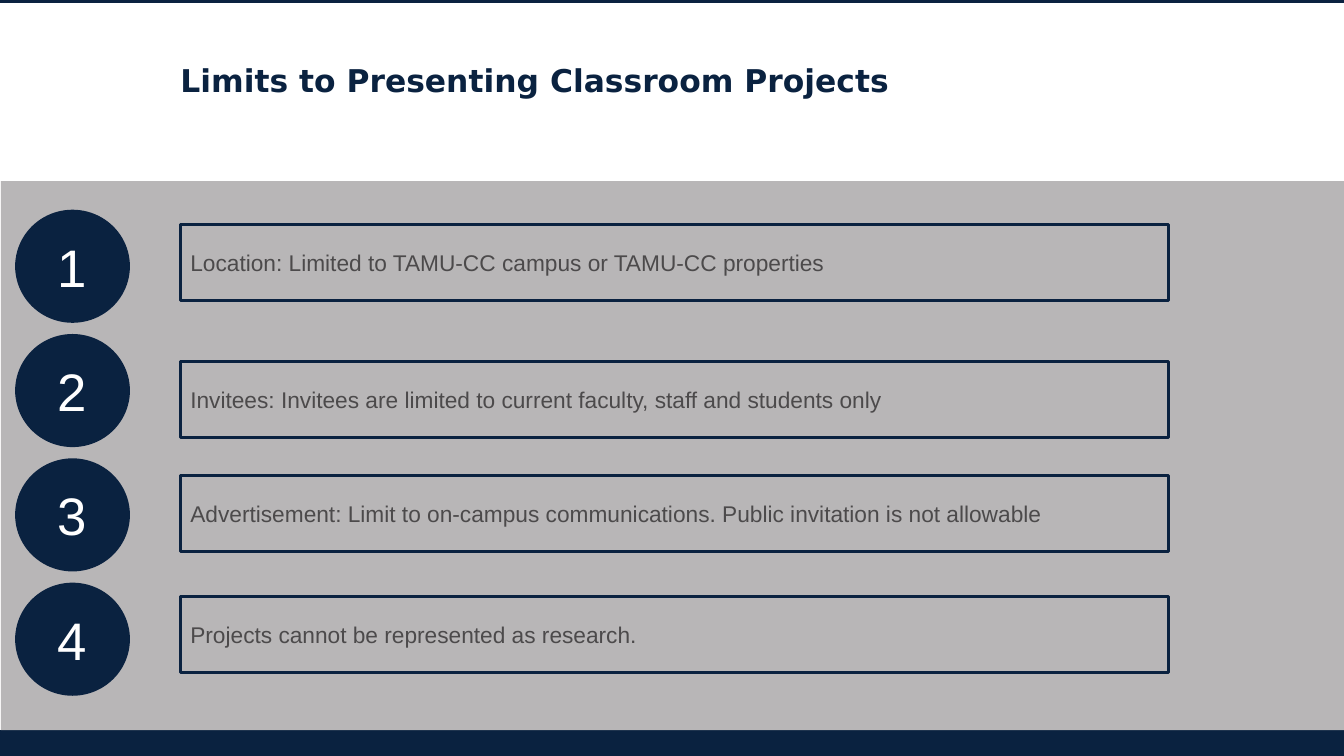
from pptx import Presentation
from pptx.dml.color import RGBColor
from pptx.enum.shapes import MSO_SHAPE as Shape
from pptx.enum.text import MSO_ANCHOR as Anchor, MSO_AUTO_SIZE as AutoSize, PP_ALIGN as Align
from pptx.util import Pt

TITLE = "Limits to Presenting Classroom Projects"
# Text of each limit and the top of its box
LIMITS = [
    ("Location: Limited to TAMU-CC campus or TAMU-CC properties", 160.6),
    ("Invitees: Invitees are limited to current faculty, staff and students only", 258.5),
    ("Advertisement: Limit to on-campus communications. Public invitation is not allowable", 339.8),
    ("Projects cannot be represented as research.", 426.2),
]
COLORS = {"navy": "0A2240", "gray": "B8B6B7", "text": "4C4A4B", "white": "FFFFFF"}

WIDTH, HEIGHT = 960, 540
BOX_LEFT, BOX_WIDTH, BOX_HEIGHT = 128.9, 705.6, 54
CIRCLE_LEFT, CIRCLE_TOP, CIRCLE_WIDTH, CIRCLE_HEIGHT = 10.8, 149.8, 82, 80.8
CIRCLE_PITCH = 88.8


def color(name):
    return RGBColor.from_string(COLORS[name])


def add_shape(kind, left, top, width, height, fill=None, line_width=0):
    shape = slide.shapes.add_shape(kind, Pt(left), Pt(top), Pt(width), Pt(height))
    shape.shadow.inherit = False
    if fill:
        shape.fill.solid()
        shape.fill.fore_color.rgb = color(fill)
    else:
        shape.fill.background()
    if line_width:
        shape.line.color.rgb = color("navy")
        shape.line.width = Pt(line_width)
    else:
        shape.line.fill.background()
    return shape


def write(shape, text, font_name, size, font_color, align=Align.LEFT, anchor=Anchor.MIDDLE):
    frame = shape.text_frame
    frame.word_wrap = True
    frame.auto_size = AutoSize.NONE
    frame.vertical_anchor = anchor
    frame.text = text
    paragraph = frame.paragraphs[0]
    paragraph.alignment = align
    paragraph.font.name = font_name
    paragraph.font.size = Pt(size)
    paragraph.font.color.rgb = color(font_color)
    return frame


presentation = Presentation()
presentation.slide_width, presentation.slide_height = Pt(WIDTH), Pt(HEIGHT)
slide = presentation.slides.add_slide(presentation.slide_layouts[5])

# Page frame, footer bar and gray panel
add_shape(Shape.RECTANGLE, -2.2, 0, 965.5, 524, "white", 4.5)
add_shape(Shape.RECTANGLE, -2.2, 523.5, 965.5, 20, "navy", 4.5)
add_shape(Shape.RECTANGLE, 0.7, 129.4, WIDTH, 392.2, "gray")

title = slide.shapes.title
title.left, title.top, title.width, title.height = Pt(BOX_LEFT), Pt(43.9), Pt(702), Pt(27.4)
title_frame = write(title, TITLE, "DejaVu Sans", 22.4, "navy", anchor=Anchor.TOP)
title_frame.margin_left = title_frame.margin_right = 0
title_frame.margin_top = title_frame.margin_bottom = 0
title_frame.paragraphs[0].font.bold = True
# Bring the title in front of the page frame
slide.shapes.element.append(title.element)

for index, (limit, box_top) in enumerate(LIMITS):
    circle = add_shape(Shape.OVAL, CIRCLE_LEFT, CIRCLE_TOP + index * CIRCLE_PITCH,
                       CIRCLE_WIDTH, CIRCLE_HEIGHT, "navy")
    write(circle, str(index + 1), "Arial", 37.7, "white", Align.CENTER)
    box = add_shape(Shape.RECTANGLE, BOX_LEFT, box_top, BOX_WIDTH, BOX_HEIGHT, line_width=2)
    write(box, limit, "Arial", 16.2, "text")

presentation.save("out.pptx")
